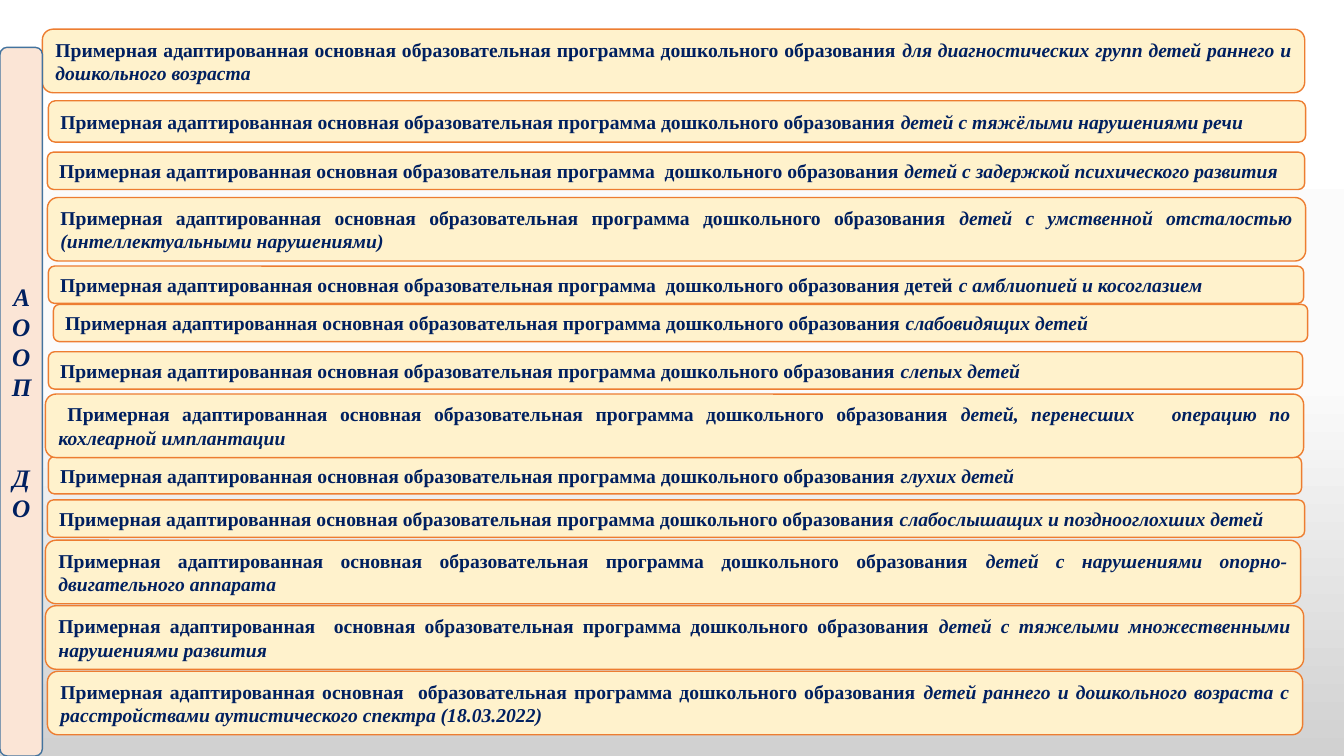
import copy

import pptx
import pptx.dml.color
import pptx.enum.shapes
import pptx.enum.text
import pptx.util

Inches = pptx.util.Inches
Pt = pptx.util.Pt
RGBColor = pptx.dml.color.RGBColor
ALIGN = pptx.enum.text.PP_ALIGN
AUTO_SIZE = pptx.enum.text.MSO_AUTO_SIZE

NAVY = RGBColor(0x00, 0x20, 0x60)
CREAM = RGBColor(0xFF, 0xF2, 0xCC)
ORANGE = RGBColor(0xED, 0x7D, 0x31)
PEACH = RGBColor(0xFB, 0xE5, 0xD6)
BLUE = RGBColor(0x43, 0x73, 0x9E)
BACKGROUND_STOPS = [
    (0, RGBColor(0xFF, 0xFF, 0xFF)),
    (0.5, RGBColor(0xFB, 0xFB, 0xFB)),
    (1, RGBColor(0xD1, 0xD1, 0xD1)),
]

ONE_LINE = 0.37
TWO_LINES = 0.63
PROGRAM = "Примерная адаптированная основная образовательная программа дошкольного образования "
PROGRAM_WIDE_END = PROGRAM.replace("программа ", "программа  ")
PROGRAM_WIDE_START = PROGRAM.replace("адаптированная ", "адаптированная  ")
PROGRAM_WIDE_MIDDLE = PROGRAM.replace("основная ", "основная  ")

PROGRAM_ROWS = [
    (0.42, 0.29, 12.52, TWO_LINES, PROGRAM,
     "для диагностических групп детей раннего и дошкольного возраста"),
    (0.48, 1.00, 12.47, 0.41, PROGRAM, "детей с тяжёлыми нарушениями речи"),
    (0.47, 1.51, 12.47, ONE_LINE, PROGRAM_WIDE_END, "детей с задержкой психического развития"),
    (0.47, 1.96, 12.48, TWO_LINES, PROGRAM,
     "детей с умственной отсталостью (интеллектуальными нарушениями)"),
    (0.48, 2.64, 12.45, ONE_LINE, PROGRAM_WIDE_END + "детей ", "с амблиопией и косоглазием"),
    (0.53, 3.02, 12.44, ONE_LINE, PROGRAM, "слабовидящих детей"),
    (0.48, 3.49, 12.44, ONE_LINE, PROGRAM, "слепых детей"),
    (0.48, 4.53, 12.43, ONE_LINE, PROGRAM, "глухих детей"),
    (0.45, 3.91, 12.48, TWO_LINES, PROGRAM,
     "детей, перенесших   операцию по кохлеарной имплантации"),
    (0.47, 4.96, 12.47, ONE_LINE, PROGRAM, "слабослышащих и позднооглохших детей"),
    (0.45, 5.36, 12.45, TWO_LINES, PROGRAM, "детей с нарушениями опорно-двигательного аппарата"),
    (0.45, 6.01, 12.48, TWO_LINES, PROGRAM_WIDE_START,
     "детей с тяжелыми множественными нарушениями развития"),
    (0.47, 6.66, 12.45, TWO_LINES, PROGRAM_WIDE_MIDDLE,
     "детей раннего и дошкольного возраста с расстройствами аутистического спектра (18.03.2022)"),
]


def add_text(paragraph, text, size=14, italic=False, align=ALIGN.JUSTIFY, before=0, indent=0):
    paragraph.alignment = align
    paragraph.space_before = Pt(before)
    if indent:
        paragraph._p.get_or_add_pPr().set("indent", str(Inches(indent)))
    run = paragraph.add_run()
    run.text = text
    run.font.name = "Times New Roman"
    run.font.size = Pt(size)
    run.font.bold = True
    run.font.italic = italic
    run.font.color.rgb = NAVY


class SlideBuilder:
    def __init__(self, presentation):
        self.slide = presentation.slides.add_slide(presentation.slide_layouts[6])

    def background(self, stops):
        fill = self.slide.background.fill
        fill.gradient()
        fill.gradient_angle = 270
        last = fill.gradient_stops[-1]._gs
        last.addprevious(copy.deepcopy(last))
        for stop, (position, color) in zip(fill.gradient_stops, stops):
            stop.position = position
            stop.color.rgb = color

    def panel(self, left, top, width, height, fill, line, auto_size):
        shape = self.slide.shapes.add_shape(
            pptx.enum.shapes.MSO_SHAPE.ROUNDED_RECTANGLE,
            Inches(left), Inches(top), Inches(width), Inches(height))
        shape.shadow.inherit = False
        shape.fill.solid()
        shape.fill.fore_color.rgb = fill
        shape.line.color.rgb = line
        shape.line.width = Pt(1)
        frame = shape.text_frame
        frame.word_wrap = True
        frame.auto_size = auto_size
        frame.vertical_anchor = pptx.enum.text.MSO_ANCHOR.MIDDLE
        return frame

    def program_row(self, left, top, width, height, program, audience):
        frame = self.panel(left, top, width, height, CREAM, ORANGE, AUTO_SIZE.SHAPE_TO_FIT_TEXT)
        paragraph = frame.paragraphs[0]
        indent = 0.09 if "кохлеарной" in audience else 0
        add_text(paragraph, program, indent=indent)
        add_text(paragraph, audience, italic=True)

    def sidebar(self, left, top, width, height, words, gap):
        frame = self.panel(left, top, width, height, PEACH, BLUE, AUTO_SIZE.NONE)
        for index, word in enumerate(words):
            paragraph = frame.add_paragraph() if index else frame.paragraphs[0]
            add_text(paragraph, word, size=18, italic=True, align=ALIGN.CENTER,
                     before=gap if index else 0)


def main():
    presentation = pptx.Presentation()
    presentation.slide_width = Inches(13.33)
    presentation.slide_height = Inches(7.5)
    builder = SlideBuilder(presentation)
    builder.background(BACKGROUND_STOPS)
    for row in PROGRAM_ROWS:
        builder.program_row(*row)
    builder.sidebar(0, 0.47, 0.42, 7.03, ["АООП", "ДО"], gap=43)
    presentation.save("out.pptx")


if __name__ == "__main__":
    main()
